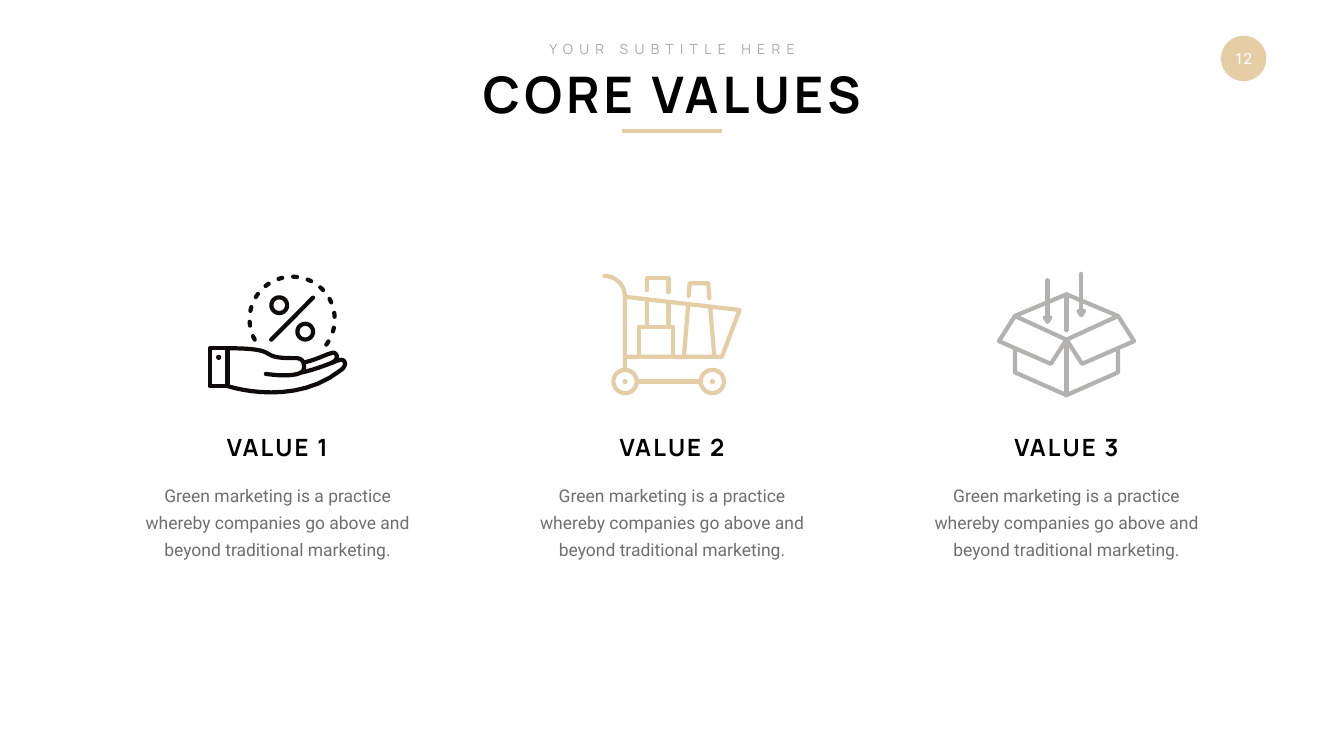
import math

from lxml import etree
from pptx import Presentation
from pptx import util as u
from pptx.dml.color import RGBColor
from pptx.enum import shapes, text
from pptx.oxml.ns import qn

Pt = u.Pt

BLACK = RGBColor(0x00, 0x00, 0x00)
INK = RGBColor(0x0E, 0x0B, 0x0A)
GOLD = RGBColor(0xE5, 0xCD, 0xA6)
SILVER = RGBColor(0xB3, 0xB2, 0xB0)
SUBTITLE_GREY = RGBColor(0xA9, 0xA9, 0xA9)
BODY_GREY = RGBColor(0x6F, 0x6F, 0x6F)
WHITE = RGBColor(0xFF, 0xFF, 0xFF)

SLIDE_W, SLIDE_H = 1919.52, 1080
CENTER = SLIDE_W / 2
PITCH = 563.4
ICON_TOP = 390
STROKE = 6
BODY = ("Green marketing is a practice whereby companies go above and "
        "beyond traditional marketing.")


def write(sp, content, *, size, color, font="Manrope", bold=False, tracking=0,
          wrap=False, anchor=text.MSO_ANCHOR.TOP, leading=None, before=None):
    tf = sp.text_frame
    tf.word_wrap = wrap
    tf.vertical_anchor = anchor
    p = tf.paragraphs[0]
    p.alignment = text.PP_ALIGN.CENTER
    if leading:
        p.line_spacing = Pt(leading)
    if before:
        p.space_before = Pt(before)
    r = p.add_run()
    r.text = content
    r.font.size = Pt(size)
    r.font.name = font
    r.font.bold = bold
    r.font.color.rgb = color
    if tracking:
        r.font._element.set("spc", str(tracking * 100))
    return tf


def add_label(s, center, top, width, height, content, **fmt):
    """Add a self-sizing text box centred on a vertical axis."""
    sp = s.shapes.add_textbox(Pt(center - width / 2), Pt(top), Pt(width), Pt(height))
    tf = write(sp, content, **fmt)
    tf.auto_size = text.MSO_AUTO_SIZE.SHAPE_TO_FIT_TEXT


def add_rule(s, x1, x2, y):
    line = s.shapes.add_connector(shapes.MSO_CONNECTOR.STRAIGHT, Pt(x1), Pt(y), Pt(x2), Pt(y))
    line.line.color.rgb = GOLD
    line.line.width = Pt(5)
    etree.SubElement(line._element.spPr, qn("a:effectLst"))


def add_page_badge(s, number):
    sp = s.shapes.add_shape(shapes.MSO_SHAPE.OVAL, Pt(1743.8), Pt(51.1), Pt(64.8), Pt(64.8))
    sp.shadow.inherit = False
    sp.fill.solid()
    sp.fill.fore_color.rgb = GOLD
    sp.line.fill.background()
    tf = write(sp, number, size=22, color=WHITE, font="Roboto", anchor=text.MSO_ANCHOR.MIDDLE)
    tf.margin_left = tf.margin_right = tf.margin_top = tf.margin_bottom = 0


def arc(cx, cy, radius, start=0, end=360):
    steps = max(2, round((end - start) / 10))
    angles = [math.radians(start + (end - start) * i / steps) for i in range(steps + 1)]
    return [(cx + radius * math.cos(a), cy + radius * math.sin(a)) for a in angles]


def dot(cx, cy):
    return arc(cx, cy, 0.6)


def curve(start, *cubics):
    """Sample a chain of cubic Bezier pieces, each given as three points."""
    points = [start]
    for b, c, d in cubics:
        a = points[-1]
        for i in range(1, 13):
            t = i / 12
            weights = ((1 - t) ** 3, 3 * t * (1 - t) ** 2, 3 * t * t * (1 - t), t ** 3)
            points.append(tuple(sum(w * q[k] for w, q in zip(weights, (a, b, c, d)))
                                for k in (0, 1)))
    return points


def rectangle(x1, y1, x2, y2):
    return [(x1, y1), (x2, y1), (x2, y2), (x1, y2), (x1, y1)]


def hand_strokes():
    palm = curve((-71.3, 107.5),
                 ((-26.3, 107.5), (-19, 111.8), (-12.6, 115.8)),
                 ((-6.8, 119), (-1.8, 122), (27, 121.6)),
                 ((27, 121.6), (32, 121.6), (35, 124.8)),
                 ((37.8, 127.7), (37.8, 132), (37.8, 135)),
                 ((37.8, 137), (37, 141.4), (30.6, 143.5)),
                 ((23.4, 146), (11, 147.8), (-16.6, 144.2)))
    finger = curve((38.5, 127.7),
                   ((50, 124.8), (57.2, 122), (64.4, 119)),
                   ((71.6, 116.2), (79.6, 112.6), (81.7, 114.4)),
                   ((87.5, 118.3), (84.6, 124.8), (77.4, 128.4)),
                   ((68, 132), (53.6, 137.8), (35, 142)))
    underside = curve((77.4, 128.4),
                      ((84.6, 125.5), (91, 122.6), (94, 124.8)),
                      ((97.6, 127.7), (97.6, 133.4), (90.4, 138.8)),
                      ((27, 188.9), (-58, 165.8), (-71.3, 161.5)))
    coin = [arc(20.9, 66.1, 60.8, a - 2.6, a + 2.6) for a in range(154, 395, 20)]
    percent = [arc(2.5, 46, 11.2), arc(39.6, 83.8, 11.2), [(-9, 95.3), (50.8, 35.2)]]
    cuff = [rectangle(-96.8, 107.5, -71.3, 161.5), dot(-84, 120.5)]
    return [palm, finger, underside] + coin + percent + cuff


def cart_strokes():
    frame = arc(-96.5, 33.4, 29.2, -90, 0) + [(-67.3, 138.5)]
    basket = [(-67.3, 34), (96.5, 52.8), (71.3, 119.8), (-67.3, 119.8)]
    wheels = [ring for x in (-67, 57.6) for ring in (arc(x, 155, 16.6), dot(x, 155))]
    bottle = [[(-36, 40), (-36, 77)], [(-5, 43), (-5, 77)],
              [(-36, 24.7), (-36, 7.4), (-5, 7.4), (-5, 27.6)]]
    bag = [[(23, 47), (17, 119.8)], [(54.7, 50.6), (60.5, 119.8)],
           [(23.8, 32.6), (25.2, 14.6), (51.8, 14.6), (53.3, 36)]]
    box = rectangle(-47.5, 77.3, 1.4, 119.8)
    return [frame, basket, box, [(-50.4, 155), (41, 155)]] + wheels + bottle + bag


def carton_strokes():
    strokes = [[(0, 30.5), (0, 81.6)], [(0, 95.3), (0, 174.5)]]
    for side in (-1, 1):
        rim = [(0, 30.5), (73.6, 61.4), (0, 95.3)]
        flap = [(73.6, 61.4), (96.5, 97.4), (22.3, 129.8), (0, 95.3)]
        wall = [(73.6, 111), (73.6, 142), (0, 174.5)]
        strokes += [[(side * x, y) for x, y in part] for part in (rim, flap, wall)]
    for x, top, tip in ((-27, 10.3, 73.7), (21.2, 1.2, 64.3)):
        head = [(x - 4, tip - 10), (x + 4, tip - 10), (x, tip - 4), (x - 4, tip - 10)]
        strokes += [[(x, top), (x, tip - 10)], head]
    return strokes


def add_icon(s, center, strokes, color):
    """Draw all strokes of an icon as one round-ended outline."""
    contours = [[(Pt(center + x), Pt(ICON_TOP + y)) for x, y in part] for part in strokes]
    builder = s.shapes.build_freeform(*contours[0][0])
    for i, points in enumerate(contours):
        if i:
            builder.move_to(*points[0])
        builder.add_line_segments(points[1:], close=False)
    sp = builder.convert_to_shape()
    sp.shadow.inherit = False
    sp.fill.background()
    sp.line.color.rgb = color
    sp.line.width = Pt(STROKE)
    ln = sp.line._get_or_add_ln()
    ln.set("cap", "rnd")
    etree.SubElement(ln, qn("a:round"))


def add_value(s, center, title, strokes, color):
    add_icon(s, center, strokes, color)
    add_label(s, center, 614.9, 175, 48.2, title, size=34, color=BLACK, bold=True,
              tracking=3, anchor=text.MSO_ANCHOR.MIDDLE)
    add_label(s, center, 681.8, 419.8, 120.2, BODY, size=25, color=BODY_GREY,
              font="Roboto", wrap=True, leading=38, before=5)


def main():
    prs = Presentation()
    prs.slide_width, prs.slide_height = Pt(SLIDE_W), Pt(SLIDE_H)
    s = prs.slides.add_slide(prs.slide_layouts[6])
    add_page_badge(s, "12")
    add_label(s, CENTER, 86.4, 578.2, 94.3, "CORE VALUES", size=72, color=BLACK,
              bold=True, tracking=6)
    add_label(s, CENTER, 54.7, 392.4, 31.7, "YOUR SUBTITLE HERE", size=20,
              color=SUBTITLE_GREY, tracking=9, before=4)
    add_rule(s, CENTER - 71.6, CENTER + 71.6, 187.2)
    values = (("VALUE 1", hand_strokes(), INK),
              ("VALUE 2", cart_strokes(), GOLD),
              ("VALUE 3", carton_strokes(), SILVER))
    for i, (title, strokes, color) in enumerate(values):
        add_value(s, CENTER + (i - 1) * PITCH, title, strokes, color)
    prs.save("out.pptx")


if __name__ == "__main__":
    main()
